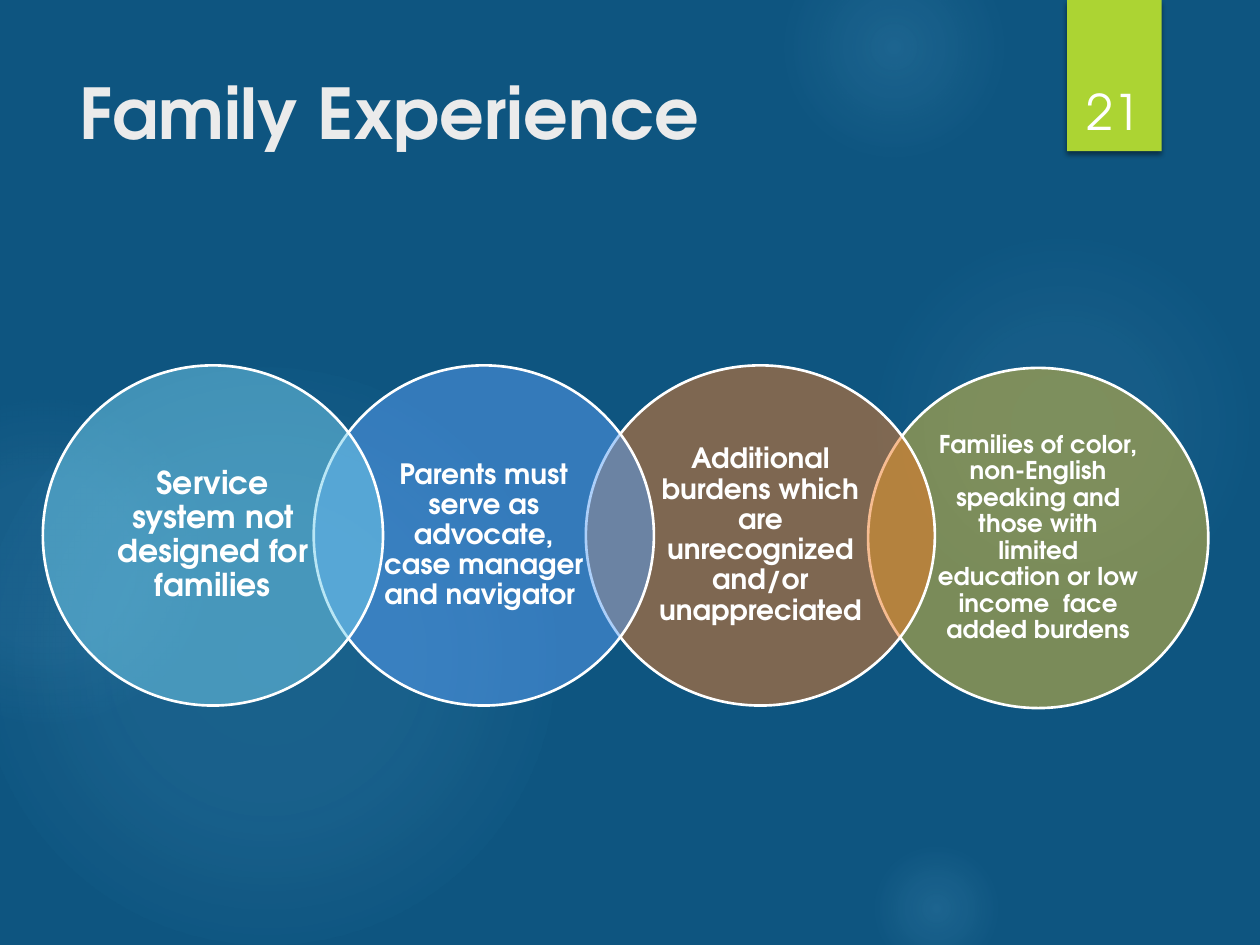
"""Build the Family Experience slide with a chain of overlapping circles."""
from dataclasses import dataclass

from lxml import etree
from pptx import Presentation
from pptx.dml.color import RGBColor
from pptx.enum import shapes, text
from pptx.oxml import ns
from pptx.util import Inches, Pt


@dataclass(frozen=True)
class Theme:
    font: str = "TeX Gyre Adventor"
    background: str = "0E5580"
    glow: str = "7AC4F0"
    ribbon: str = "ACD433"
    title: str = "EBEBEB"
    light: str = "FFFFFF"
    shadow: str = "000000"
    title_size: int = 40
    number_size: int = 28


THEME = Theme()
TITLE = "Family Experience"
PAGE_NUMBER = "21"
GLOWS = [
    (6.89, 1.83, 3.08, [(0, 7), (36, 6), (69, 0)]),
    (6.22, -0.5, 1.75, [(0, 14), (36, 7), (73, 0)]),
    (6.89, 6.67, 1.08, [(0, 14), (36, 7), (66, 0)]),
    (-0.17, 2.92, 4.58, [(0, 11), (36, 10), (75, 0)]),
    (-0.92, 3.17, 2.58, [(0, 8), (36, 8), (72, 0)]),
]
CIRCLE_HEIGHT = 2.7
CIRCLES = [
    (6.89, 2.92, 2.7, "E6C133", 14, "Families of color, non-English speaking and those with "
     "limited education or low income  face added burdens"),
    (4.65, 2.9, 2.77, "EF7A24", 16, "Additional burdens which are unrecognized and/or unappreciated"),
    (2.49, 2.9, 2.7, "5AA0F5", 16, "Parents must serve as advocate, case manager and navigator "),
    (0.34, 2.9, 2.7, "75CEEC", 18, "Service system not designed for families"),
]


def add_element(parent, tag, **attributes):
    element = etree.SubElement(parent, ns.qn(tag))
    for name, value in attributes.items():
        element.set(name, str(value))
    return element


def add_color(parent, color, alpha):
    element = add_element(parent, "a:srgbClr", val=color)
    add_element(element, "a:alpha", val=alpha * 1000)


def add_filled_shape(slide, kind, box, color):
    shape = slide.shapes.add_shape(kind, *map(Inches, box))
    shape.shadow.inherit = False
    shape.fill.solid()
    shape.fill.fore_color.rgb = RGBColor.from_string(color)
    shape.line.fill.background()
    return shape


def write(shape, content, size, color, anchor, alignment, bold=False):
    frame = shape.text_frame
    frame.text = content
    frame.word_wrap = True
    frame.vertical_anchor = anchor
    paragraph = frame.paragraphs[0]
    paragraph.alignment = alignment
    font = paragraph.runs[0].font
    font.name, font.size, font.bold = THEME.font, Pt(size), bold
    font.color.rgb = RGBColor.from_string(color)
    return paragraph


def add_glow(slide, left, top, size, stops):
    shape = add_filled_shape(slide, shapes.MSO_SHAPE.OVAL, (left, top, size, size), THEME.glow)
    solid = shape.element.spPr.find(ns.qn("a:solidFill"))
    gradient = etree.Element(ns.qn("a:gradFill"), rotWithShape="1")
    stop_list = add_element(gradient, "a:gsLst")
    for position, alpha in stops:
        add_color(add_element(stop_list, "a:gs", pos=position * 1000), THEME.glow, alpha)
    circle = add_element(gradient, "a:path", path="circle")
    add_element(circle, "a:fillToRect", l=50000, t=50000, r=50000, b=50000)
    solid.getparent().replace(solid, gradient)


def add_ribbon(slide):
    ribbon = add_filled_shape(slide, shapes.MSO_SHAPE.RECTANGLE, (8.47, 0, 0.75, 1.2), THEME.ribbon)
    effects = ribbon.element.spPr.find(ns.qn("a:effectLst"))
    shadow = add_element(effects, "a:outerShdw", blurRad=Pt(3), dist=Pt(2),
                         dir=90 * 60000, rotWithShape=0)
    add_color(shadow, THEME.shadow, 45)


def add_circle(slide, left, top, width, color, size, content):
    circle = add_filled_shape(slide, shapes.MSO_SHAPE.OVAL,
                              (left, top, width, CIRCLE_HEIGHT), color)
    fill_color = circle.element.spPr.find(ns.qn("a:solidFill"))[0]
    add_element(fill_color, "a:alpha", val=50000)
    circle.line.color.rgb = RGBColor.from_string(THEME.light)
    circle.line.width = Pt(1.5)
    frame = circle.text_frame
    frame.margin_left = frame.margin_right = Inches(0.15)
    frame.margin_top = frame.margin_bottom = Inches(0.02)
    paragraph = write(circle, content, size, THEME.light,
                      text.MSO_ANCHOR.MIDDLE, text.PP_ALIGN.CENTER, bold=True)
    paragraph.line_spacing = 0.9


def main():
    presentation = Presentation()
    presentation.slide_width, presentation.slide_height = Inches(10), Inches(7.5)
    slide = presentation.slides.add_slide(presentation.slide_layouts[5])
    slide.background.fill.solid()
    slide.background.fill.fore_color.rgb = RGBColor.from_string(THEME.background)

    for glow in GLOWS:
        add_glow(slide, *glow)
    add_ribbon(slide)

    title = slide.shapes.title
    title.left, title.top, title.width, title.height = map(Inches, (0.53, 0.5, 7.72, 1.17))
    write(title, TITLE, THEME.title_size, THEME.title,
          text.MSO_ANCHOR.TOP, text.PP_ALIGN.LEFT, bold=True)

    for circle in CIRCLES:
        add_circle(slide, *circle)

    number = slide.shapes.add_textbox(*map(Inches, (8.49, 0.32, 0.69, 0.84)))
    write(number, PAGE_NUMBER, THEME.number_size, THEME.light,
          text.MSO_ANCHOR.BOTTOM, text.PP_ALIGN.CENTER)
    presentation.save("out.pptx")


if __name__ == "__main__":
    main()
